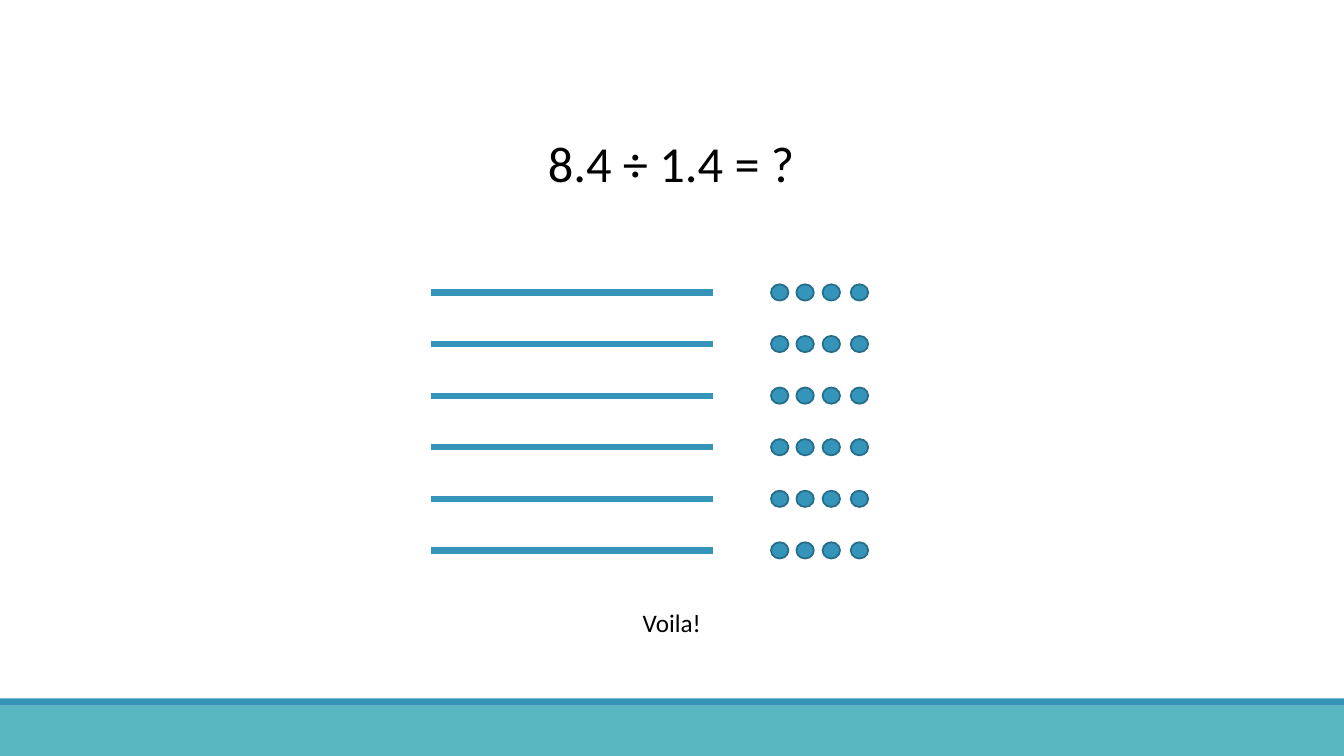
"""Build a slide that shows 8.4 ÷ 1.4 as six rows of one line and four dots."""
import pptx
import pptx.dml.color
import pptx.enum.shapes
import pptx.enum.text
import pptx.oxml.ns
import pptx.util
from lxml import etree

Cm = pptx.util.Cm
Pt = pptx.util.Pt
RGBColor = pptx.dml.color.RGBColor
MSO_SHAPE = pptx.enum.shapes.MSO_SHAPE

BLUE = RGBColor(0x34, 0x94, 0xBA)
DARK_BLUE = RGBColor(0x26, 0x6D, 0x8A)
TEAL = RGBColor(0x58, 0xB6, 0xC0)
BLACK = RGBColor(0, 0, 0)

ROWS = 6
ROW_TOP = 7.37
ROW_PITCH = 1.3
LINE_LEFT, LINE_RIGHT = 10.85, 17.96
DOT_LEFTS = (19.43, 20.07, 20.73, 21.44)
DOT_WIDTH, DOT_HEIGHT = 0.44, 0.41


def add_filled(slide, kind, left, top, width, height, fill, outline=None):
    sp = slide.shapes.add_shape(kind, Cm(left), Cm(top), Cm(width), Cm(height))
    sp.shadow.inherit = False
    sp.fill.solid()
    sp.fill.fore_color.rgb = fill
    if outline is None:
        sp.line.fill.background()
    else:
        sp.line.color.rgb = outline
        sp.line.width = Pt(1.25)


def add_ones_line(slide, y):
    line = slide.shapes.add_connector(
        pptx.enum.shapes.MSO_CONNECTOR.STRAIGHT,
        Cm(LINE_LEFT), Cm(y), Cm(LINE_RIGHT), Cm(y))
    line.line.color.rgb = BLUE
    line.line.width = Pt(4.5)
    etree.SubElement(line._element.spPr, pptx.oxml.ns.qn("a:effectLst"))


def write_text(sp, text, size, left, top, width, height):
    sp.left, sp.top, sp.width, sp.height = Cm(left), Cm(top), Cm(width), Cm(height)
    tf = sp.text_frame
    tf.text = text
    tf.word_wrap = True
    tf.auto_size = pptx.enum.text.MSO_AUTO_SIZE.SHAPE_TO_FIT_TEXT
    tf.vertical_anchor = pptx.enum.text.MSO_ANCHOR.TOP
    p = tf.paragraphs[0]
    p.alignment = pptx.enum.text.PP_ALIGN.CENTER
    r = p.runs[0]
    r.font.name = "Calibri"
    r.font.size = Pt(size)
    r.font.color.rgb = BLACK


def main():
    prs = pptx.Presentation()
    prs.slide_width, prs.slide_height = Cm(33.87), Cm(19.05)
    slide = prs.slides.add_slide(prs.slide_layouts.get_by_name("Title Only"))

    add_filled(slide, MSO_SHAPE.RECTANGLE, 0, 17.78, 33.87, 1.27, TEAL)
    add_filled(slide, MSO_SHAPE.RECTANGLE, 0, 17.6, 33.87, 0.18, BLUE)
    write_text(slide.shapes.title, "8.4 ÷ 1.4 = ?", 36, 11.48, 3.2, 10.87, 1.8)

    for row in range(ROWS):
        y = ROW_TOP + row * ROW_PITCH
        add_ones_line(slide, y)
        for left in DOT_LEFTS:
            add_filled(slide, MSO_SHAPE.OVAL, left, y - DOT_HEIGHT / 2,
                       DOT_WIDTH, DOT_HEIGHT, BLUE, DARK_BLUE)

    caption = slide.shapes.add_textbox(0, 0, 0, 0)
    write_text(caption, "Voila!", 18, 9.02, 15.19, 15.82, 1.02)
    prs.save("out.pptx")


if __name__ == "__main__":
    main()
